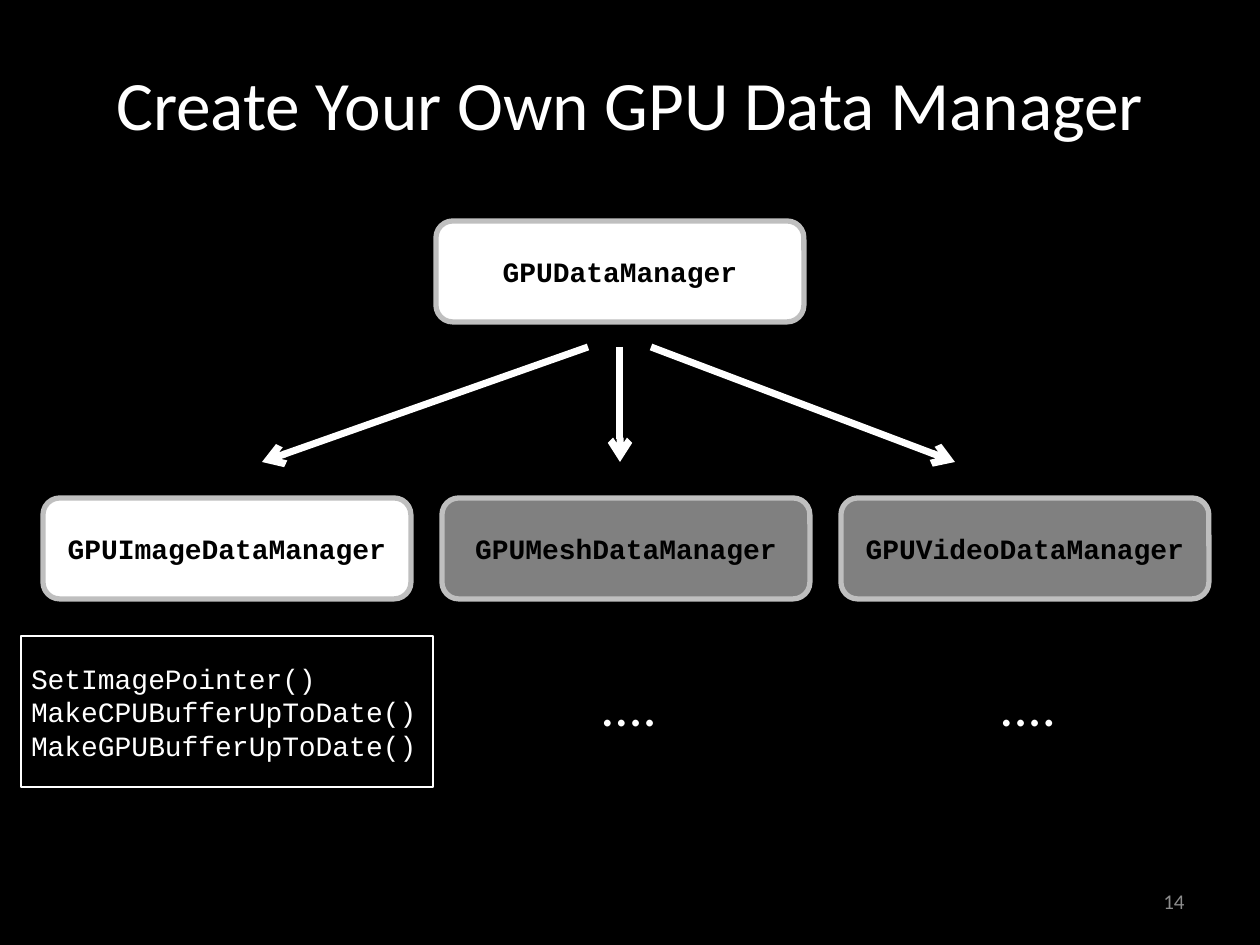
from dataclasses import dataclass

from lxml.etree import SubElement
from pptx import Presentation
from pptx.dml.color import RGBColor
from pptx.enum.shapes import MSO_CONNECTOR, MSO_SHAPE
from pptx.enum.text import MSO_ANCHOR, PP_ALIGN
from pptx.oxml.ns import qn
from pptx.util import Emu, Pt

PX_PER_INCH = 126
BLACK = RGBColor(0x00, 0x00, 0x00)
WHITE = RGBColor(0xFF, 0xFF, 0xFF)
GRAY = RGBColor(0x80, 0x80, 0x80)
BORDER = RGBColor(0xBF, 0xBF, 0xBF)
NUMBER_GRAY = RGBColor(0x8C, 0x8C, 0x8C)
SANS = "Calibri"
MONO = "Courier New"

BOX_WIDTH, BOX_HEIGHT = 368, 101
CHILD_LEFT, CHILD_TOP, CHILD_PITCH = 43, 498, 399
ARROW_TOP, ARROW_BOTTOM = 347, 462


@dataclass(frozen=True)
class Manager:
    name: str
    fill: RGBColor
    arrow_start: int
    arrow_end: int
    methods: tuple[str, ...] = ()


MANAGERS = (
    Manager(
        "GPUImageDataManager", WHITE, 588, 262,
        ("SetImagePointer()", "MakeCPUBufferUpToDate()", "MakeGPUBufferUpToDate()"),
    ),
    Manager("GPUMeshDataManager", GRAY, 620, 620),
    Manager("GPUVideoDataManager", GRAY, 651, 955),
)


def px(length: int) -> Emu:
    return Emu(round(length * 914400 / PX_PER_INCH))


def write(shape, *lines: str, size: float, font: str = SANS, color: RGBColor = WHITE,
          bold: bool = False, align=PP_ALIGN.LEFT, anchor=MSO_ANCHOR.MIDDLE,
          wrap: bool = True) -> None:
    frame = shape.text_frame
    frame.word_wrap = wrap
    frame.vertical_anchor = anchor
    frame.text = "\n".join(lines)
    for paragraph in frame.paragraphs:
        paragraph.alignment = align
        paragraph.font.size = Pt(size)
        paragraph.font.name = font
        paragraph.font.bold = bold
        paragraph.font.color.rgb = color


def add_text(slide, left: int, top: int, width: int, height: int,
             *lines: str, **text_format) -> None:
    box = slide.shapes.add_textbox(px(left), px(top), px(width), px(height))
    write(box, *lines, **text_format)


def add_manager_box(slide, left: int, top: int, name: str, fill: RGBColor) -> None:
    box = slide.shapes.add_shape(
        MSO_SHAPE.ROUNDED_RECTANGLE, px(left), px(top), px(BOX_WIDTH), px(BOX_HEIGHT))
    box.shadow.inherit = False
    box.fill.solid()
    box.fill.fore_color.rgb = fill
    box.line.color.rgb = BORDER
    box.line.width = Pt(3)
    write(box, name, size=16, font=MONO, color=BLACK, bold=True,
          align=PP_ALIGN.CENTER, wrap=False)


def add_arrow(slide, start: int, end: int) -> None:
    arrow = slide.shapes.add_connector(
        MSO_CONNECTOR.STRAIGHT, px(start), px(ARROW_TOP), px(end), px(ARROW_BOTTOM))
    arrow.line.color.rgb = WHITE
    arrow.line.width = Pt(4)
    SubElement(arrow.line._get_or_add_ln(), qn("a:tailEnd"), type="arrow")
    SubElement(arrow._element.spPr, qn("a:effectLst"))


def add_methods(slide, manager: Manager, left: int) -> None:
    if not manager.methods:
        add_text(slide, left + 146, 664, 83, 81, "....", size=32,
                 anchor=MSO_ANCHOR.TOP, wrap=False)
        return
    frame = slide.shapes.add_shape(
        MSO_SHAPE.RECTANGLE, px(left - 22), px(636), px(412), px(151))
    frame.shadow.inherit = False
    frame.fill.background()
    frame.line.color.rgb = WHITE
    frame.line.width = Pt(0.75)
    write(frame, *manager.methods, size=16, font=MONO)
    frame.text_frame.margin_left = px(10)


def main() -> None:
    presentation = Presentation()
    presentation.slide_width = px(1260)
    presentation.slide_height = px(945)
    slide = presentation.slides.add_slide(presentation.slide_layouts[6])
    slide.background.fill.solid()
    slide.background.fill.fore_color.rgb = BLACK

    add_text(slide, 63, 38, 1134, 130, "Create Your Own GPU Data Manager",
             size=39.6, align=PP_ALIGN.CENTER)
    add_text(slide, 903, 876, 294, 50, "14", size=12, color=NUMBER_GRAY,
             align=PP_ALIGN.RIGHT)

    add_manager_box(slide, 436, 221, "GPUDataManager", WHITE)
    for column, manager in enumerate(MANAGERS):
        left = CHILD_LEFT + column * CHILD_PITCH
        add_manager_box(slide, left, CHILD_TOP, manager.name, manager.fill)
        add_arrow(slide, manager.arrow_start, manager.arrow_end)
        add_methods(slide, manager, left)

    presentation.save("out.pptx")


if __name__ == "__main__":
    main()
